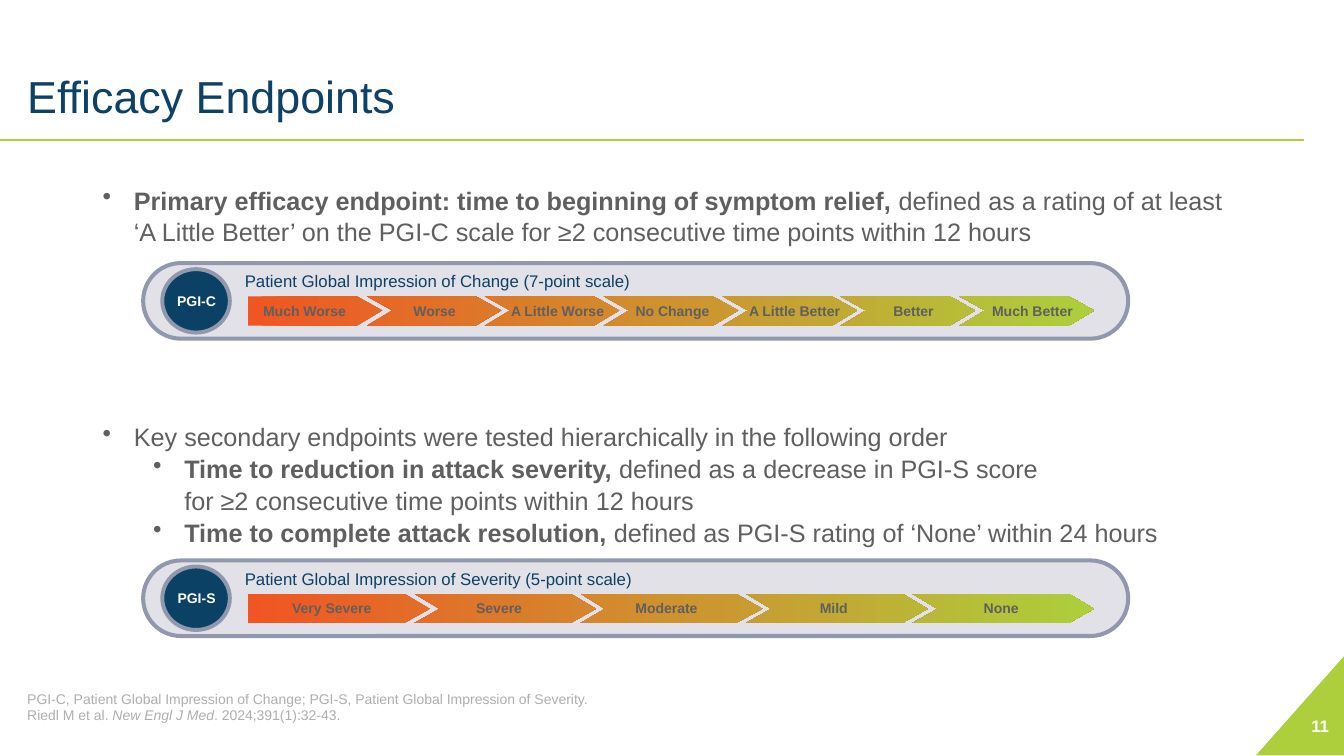
from copy import deepcopy

from lxml import etree
from pptx import Presentation
from pptx import util as u
from pptx.dml.color import RGBColor
from pptx.enum import shapes, text
from pptx.oxml.ns import qn

PX = 9144
COLOURS = {
    "navy": "0D4167", "disc": "0C4166", "lime": "ADCF3B", "grey": "5F5F5F",
    "pale": "AFAFAF", "white": "FFFFFF", "card": "E1E1E7", "rim": "9198AE",
    "worst": "F05523", "middle": "CE922F",
}
LEFT, CENTRE, RIGHT = text.PP_ALIGN.LEFT, text.PP_ALIGN.CENTER, text.PP_ALIGN.RIGHT
TOP, MIDDLE, BOTTOM = text.MSO_ANCHOR.TOP, text.MSO_ANCHOR.MIDDLE, text.MSO_ANCHOR.BOTTOM
FORMATS = {
    "title": {"size": 32, "colour": "navy"},
    "body": {"size": 18, "colour": "grey"},
    "note": {"size": 10, "colour": "pale"},
    "number": {"size": 12, "colour": "white", "bold": True},
    "heading": {"size": 12, "colour": "disc"},
    "disc": {"size": 10, "colour": "white", "bold": True},
    "label": {"size": 10, "colour": "grey", "bold": True},
}


def rgb(name):
    return RGBColor.from_string(COLOURS[name])


class EndpointPage:
    def __init__(self, deck):
        self.page = deck.slides.add_slide(deck.slide_layouts[6])
        self.items = self.page.shapes

    def shape(self, kind, place, fill, rim=None, width=2.88, turn=0):
        shape = self.items.add_shape(kind, *[v * PX for v in place])
        shape.shadow.inherit = False
        shape.rotation = turn
        shape.fill.solid()
        shape.fill.fore_color.rgb = rgb(fill)
        if rim:
            shape.line.color.rgb = rgb(rim)
            shape.line.width = u.Pt(width)
        else:
            shape.line.fill.background()
        return shape

    def rule(self, left, right, top, colour):
        line = self.items.add_connector(
            shapes.MSO_CONNECTOR.STRAIGHT, left * PX, top * PX, right * PX, top * PX)
        line.line.color.rgb = rgb(colour)
        line.line.width = u.Pt(2)
        etree.SubElement(line._element.spPr, qn("a:effectLst"))

    def text_box(self, place, style, paras, align=LEFT, anchor=TOP, inset=(10, 5)):
        box = self.items.add_textbox(*[v * PX for v in place])
        side, edge = inset
        frame = {
            "word_wrap": True, "vertical_anchor": anchor,
            "margin_left": side * PX, "margin_right": side * PX,
            "margin_top": edge * PX, "margin_bottom": edge * PX,
        }
        for name, value in frame.items():
            setattr(box.text_frame, name, value)
        for index, spans in enumerate(paras):
            para = box.text_frame.add_paragraph() if index else box.text_frame.paragraphs[0]
            para.alignment = align
            for words, extra in spans:
                if words == "\n":
                    para.add_line_break()
                else:
                    self.span(para, words, {**FORMATS[style], **extra})
        return box

    def span(self, para, words, style):
        span = para.add_run()
        span.text = words
        values = {"name": "Arial", **style, "size": u.Pt(style["size"])}
        span.font.color.rgb = rgb(values.pop("colour"))
        for name, value in values.items():
            setattr(span.font, name, value)

    def bullets(self, place, paras, levels):
        box = self.text_box(place, "body", paras)
        for para, level in zip(box.text_frame.paragraphs, levels):
            para.level = level
            para.line_spacing = 1.05
            props = para._p.get_or_add_pPr()
            props.set("marL", str((31 + 50 * level) * PX))
            props.set("indent", str(-31 * PX))
            etree.SubElement(props, qn("a:buChar")).set("char", "•")

    def chevrons(self, left, top, count, length):
        width, height, tip = 839, 29, 25
        step = (width - length) / (count - 1)
        middle, bottom = top + height / 2, top + height
        builder = self.items.build_freeform(left, top, scale=PX)
        for index in range(count):
            start = left + index * step
            end = start + length
            notch = start + (tip if index else 0)
            if index:
                builder.move_to(start, top)
            builder.add_line_segments(
                [(end - tip, top), (end, middle), (end - tip, bottom),
                 (start, bottom), (notch, middle)], close=True)
        band = builder.convert_to_shape()
        band.shadow.inherit = False
        band.line.fill.background()
        band.fill.gradient()
        band.fill.gradient_angle = 0
        stops = band._element.spPr.find(".//" + qn("a:gsLst"))
        stops.append(deepcopy(stops[-1]))
        ramp = [(0, "worst"), (0.5, "middle"), (1, "lime")]
        for stop, (position, colour) in zip(band.fill.gradient_stops, ramp):
            stop.position = position
            stop.color.rgb = rgb(colour)

    def scale_card(self, top, name, heading, length, labels):
        card = self.shape(shapes.MSO_SHAPE.ROUNDED_RECTANGLE, (142, top, 977, 75), "card", "rim")
        card.adjustments[0] = 0.5
        self.shape(shapes.MSO_SHAPE.OVAL, (161, top + 6, 67, 63), "disc", "rim", 2.81)
        self.text_box((155, top + 24, 80, 27), "disc", [[(name, {})]], CENTRE, MIDDLE)
        self.text_box((233, top + 3, 500, 30), "heading", [[(heading, {})]])
        self.chevrons(246, top + 33, len(labels), length)
        for words, centre in labels:
            self.text_box((centre - 70, top + 34, 140, 27), "label", [[(words, {})]],
                          CENTRE, MIDDLE)


def main():
    deck = Presentation()
    deck.slide_width, deck.slide_height = 1333 * PX, 750 * PX
    page = EndpointPage(deck)
    bold, italic = {"bold": True}, {"italic": True}

    page.shape(shapes.MSO_SHAPE.RIGHT_TRIANGLE, (1240, 656, 99, 88), "lime", turn=270)
    page.rule(-1, 1293, 139, "lime")
    page.text_box((27, 27, 1169, 99), "title", [[("Efficacy Endpoints", {})]],
                  anchor=BOTTOM, inset=(0, 5))
    page.text_box((1262, 700, 66, 40), "number", [[("11", {})]], RIGHT, MIDDLE)
    page.text_box((27, 657, 1218, 61), "note", [
        [("PGI-C, Patient Global Impression of Change; "
          "PGI-S, Patient Global Impression of Severity.", {})],
        [("Riedl M et al. ", {}), ("New Engl J Med", italic), (". 2024;391(1):32-43.", {})],
    ], anchor=BOTTOM, inset=(0, 0))

    page.scale_card(261, "PGI-C", "Patient Global Impression of Change (7-point scale)", 133, [
        ("Much Worse", 302), ("Worse", 431), ("A Little Worse", 553), ("No Change", 667),
        ("A Little Better", 788), ("Better", 906), ("Much Better", 1024)])
    severities = ["Very Severe", "Severe", "Moderate", "Mild", "None"]
    page.scale_card(556, "PGI-S", "Patient Global Impression of Severity (5-point scale)", 180,
                    [(words, 329 + 166 * index) for index, words in enumerate(severities)])

    page.bullets((92, 177, 1150, 71), [
        [("Primary efficacy endpoint: time to beginning of symptom relief,", bold),
         (" defined as a rating of at least ‘A Little Better’ on the PGI-C scale "
          "for ≥2 consecutive time points within 12 hours", {})],
    ], [0])
    page.bullets((92, 412, 1150, 131), [
        [("Key secondary endpoints were tested hierarchically in the following order", {})],
        [("Time to reduction in attack severity, ", bold),
         ("defined as a decrease in PGI-S score", {}), ("\n", {}),
         ("for ≥2 consecutive time points within 12 hours", {})],
        [("Time to complete attack resolution, ", bold),
         ("defined as PGI-S rating of ‘None’ within 24 hours", {})],
    ], [0, 1, 1])
    deck.save("out.pptx")


if __name__ == "__main__":
    main()
